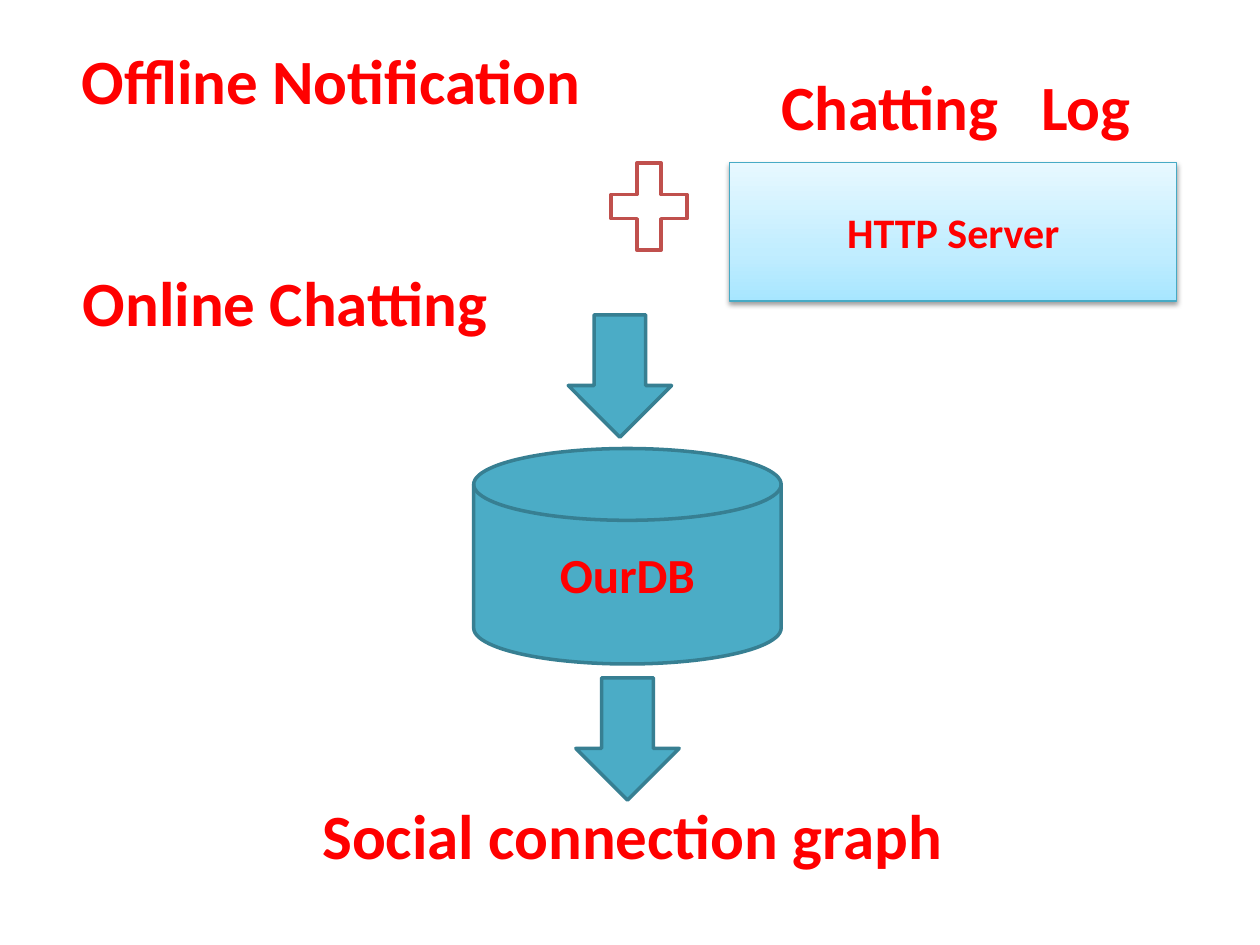
from copy import deepcopy

from lxml.etree import SubElement
from pptx import Presentation
from pptx.dml.color import RGBColor
from pptx.enum.shapes import MSO_SHAPE
from pptx.enum.text import MSO_ANCHOR, MSO_AUTO_SIZE, PP_ALIGN
from pptx.oxml.ns import qn
from pptx.util import Inches, Pt

THEME = {
    "font": "Calibri", "text": "FF0000",
    "head": 36, "store": 28, "server": 24,
    "teal": "4BACC6", "edge": "377F92",
    "white": "FFFFFF", "red": "C0504D", "rim": "46AAC5",
    "glow": [(0, "A7E6FF"), (0.35, "C1EDFF"), (1, "E7F8FF")],
}

# text, left, top, width, alignment
LABELS = [
    ("Offline Notification", 0.55, 0.28, 4.37, PP_ALIGN.LEFT),
    ("Online Chatting", 0.56, 2.04, 3.7, PP_ALIGN.LEFT),
    ("Social connection graph", 2.03, 6.27, 5.98, PP_ALIGN.CENTER),
    ("Chatting   Log", 6.1, 0.49, 3.58, PP_ALIGN.LEFT),
]
LABEL_H = 0.71
PLUS = (4.74, 1.17, 0.82, 0.94)
SERVER = ("HTTP Server", (5.79, 1.29, 3.55, 1.1))
STORE = ("OurDB", (3.76, 3.56, 2.44, 1.71))
ARROWS = [(4.51, 2.5), (4.57, 5.38)]
ARROW_SIZE = (0.82, 0.97)


def rgb(name):
    return RGBColor.from_string(THEME.get(name, name))


def write(shape, text, size, align):
    frame = shape.text_frame
    frame.word_wrap = True
    frame.text = text
    para = frame.paragraphs[0]
    para.alignment = align
    font = para.runs[0].font
    font.name, font.size, font.bold = THEME["font"], Pt(THEME[size]), True
    font.color.rgb = rgb("text")


def draw(slide, kind, box, fill, line, weight=2):
    shape = slide.shapes.add_shape(kind, *map(Inches, box))
    shape.shadow.inherit = False
    if fill:
        shape.fill.solid()
        shape.fill.fore_color.rgb = rgb(fill)
    shape.line.color.rgb = rgb(line)
    shape.line.width = Pt(weight)
    return shape


def caption(shape, text, size):
    write(shape, text, size, PP_ALIGN.CENTER)
    shape.text_frame.vertical_anchor = MSO_ANCHOR.MIDDLE


def shade(shape, stops):
    """Fill with a gradient that runs from the bottom up."""
    fill = shape.fill
    fill.gradient()
    fill.gradient_angle = 90
    row = shape.element.spPr.find(qn("a:gradFill")).find(qn("a:gsLst"))
    while len(row) < len(stops):
        row.append(deepcopy(row[0]))
    for stop, (place, color) in zip(fill.gradient_stops, stops):
        stop.position = place
        stop.color.rgb = rgb(color)


def drop_shadow(shape):
    effects = shape.element.spPr.find(qn("a:effectLst"))
    outer = SubElement(effects, qn("a:outerShdw"), blurRad=str(Pt(3.1)),
                       dist=str(Pt(1.6)), dir="5400000", rotWithShape="0")
    color = SubElement(outer, qn("a:srgbClr"), val="000000")
    SubElement(color, qn("a:alpha"), val="38000")


def main():
    deck = Presentation()
    deck.slide_width, deck.slide_height = Inches(10), Inches(7.5)
    slide = deck.slides.add_slide(deck.slide_layouts[6])

    for text, left, top, width, align in LABELS:
        box = slide.shapes.add_textbox(
            *map(Inches, (left, top, width, LABEL_H)))
        write(box, text, "head", align)
        box.text_frame.auto_size = MSO_AUTO_SIZE.SHAPE_TO_FIT_TEXT

    draw(slide, MSO_SHAPE.MATH_PLUS, PLUS, "white", "red")

    text, box = SERVER
    server = draw(slide, MSO_SHAPE.RECTANGLE, box, None, "rim", 0.75)
    shade(server, THEME["glow"])
    drop_shadow(server)
    caption(server, text, "server")

    text, box = STORE
    store = draw(slide, MSO_SHAPE.FLOWCHART_MAGNETIC_DISK, box, "teal", "edge")
    caption(store, text, "store")

    for spot in ARROWS:
        draw(slide, MSO_SHAPE.DOWN_ARROW, spot + ARROW_SIZE, "teal", "edge")

    deck.save("out.pptx")


if __name__ == "__main__":
    main()
